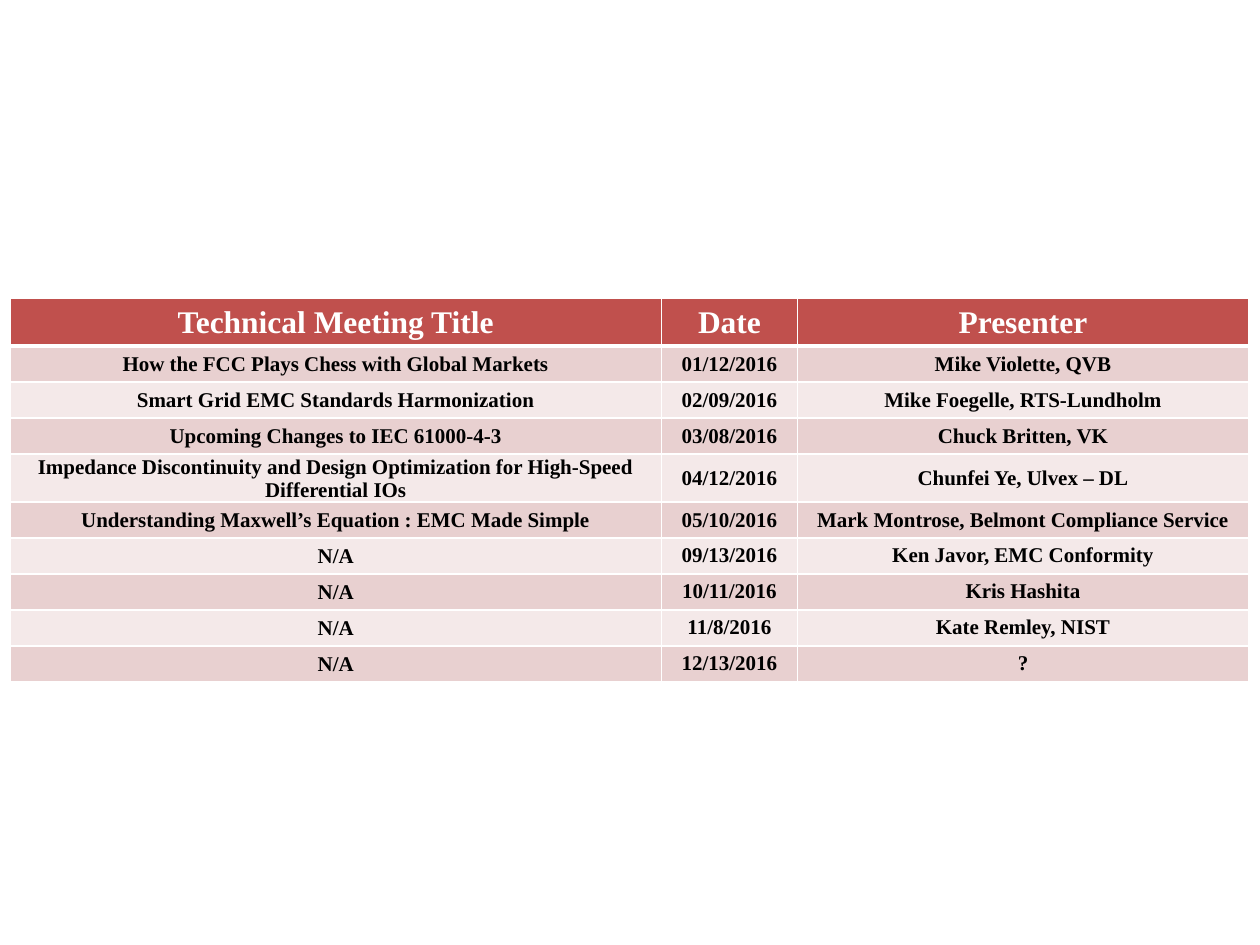
from lxml.etree import SubElement
from pptx import Presentation
from pptx.dml.color import RGBColor
from pptx.enum.text import MSO_ANCHOR, PP_ALIGN
from pptx.oxml.ns import qn
from pptx.util import Inches, Pt

WHITE = RGBColor(0xFF, 0xFF, 0xFF)
BLACK = RGBColor(0x00, 0x00, 0x00)
HEADER_RED = RGBColor(0xC0, 0x50, 0x4D)
BANDS = [RGBColor(0xE8, 0xD0, 0xD0), RGBColor(0xF4, 0xE9, 0xE9)]

HEADINGS = ("Technical Meeting Title", "Date", "Presenter")
MEETINGS = [
    ("How the FCC Plays Chess with Global Markets", "01/12/2016", "Mike Violette, QVB"),
    ("Smart Grid EMC Standards Harmonization", "02/09/2016", "Mike Foegelle, RTS-Lundholm"),
    ("Upcoming Changes to IEC 61000-4-3", "03/08/2016", "Chuck Britten, VK"),
    ("Impedance Discontinuity and Design Optimization for High-Speed Differential IOs",
     "04/12/2016", "Chunfei Ye, Ulvex – DL"),
    ("Understanding Maxwell’s Equation : EMC Made Simple", "05/10/2016",
     "Mark Montrose, Belmont Compliance Service"),
    ("N/A", "09/13/2016", "Ken Javor, EMC Conformity"),
    ("N/A", "10/11/2016", "Kris Hashita"),
    ("N/A", "11/8/2016", "Kate Remley, NIST"),
    ("N/A", "12/13/2016", "?"),
]
COLUMN_WIDTHS = [5.17, 1.08, 3.58]
ROW_HEIGHTS = [0.37] + [0.28] * 3 + [0.38] + [0.28] * 5


def write_cell(cell, text, size=12, color=BLACK, fill=BANDS[0]):
    cell.fill.solid()
    cell.fill.fore_color.rgb = fill
    cell.vertical_anchor = MSO_ANCHOR.MIDDLE
    paragraph = cell.text_frame.paragraphs[0]
    paragraph.alignment = PP_ALIGN.CENTER
    run = paragraph.add_run()
    run.text = text
    run.font.name = "Times New Roman"
    run.font.size = Pt(size)
    run.font.bold = True
    run.font.color.rgb = color


def add_borders(cell, bottom=1):
    properties = cell._tc.get_or_add_tcPr()
    widths = {"a:lnL": 1, "a:lnR": 1, "a:lnT": 1, "a:lnB": bottom}
    for index, (tag, width) in enumerate(widths.items()):
        line = SubElement(properties, qn(tag), w=str(Pt(width)))
        fill = SubElement(line, qn("a:solidFill"))
        SubElement(fill, qn("a:srgbClr"), val=str(WHITE))
        properties.insert(index, line)  # borders come before the cell fill


presentation = Presentation()
presentation.slide_width = Inches(10)
presentation.slide_height = Inches(7.5)
slide = presentation.slides.add_slide(presentation.slide_layouts[6])

# Meeting schedule table
table = slide.shapes.add_table(
    len(ROW_HEIGHTS), len(COLUMN_WIDTHS), Inches(0.08), Inches(2.37),
    Inches(sum(COLUMN_WIDTHS)), Inches(sum(ROW_HEIGHTS))).table
for column, width in zip(table.columns, COLUMN_WIDTHS):
    column.width = Inches(width)
for row, height in zip(table.rows, ROW_HEIGHTS):
    row.height = Inches(height)

# Header row
for cell, heading in zip(table.rows[0].cells, HEADINGS):
    write_cell(cell, heading, size=18, color=WHITE, fill=HEADER_RED)
    add_borders(cell, bottom=3)

# Meetings in alternating bands
for index, meeting in enumerate(MEETINGS):
    cells = list(table.rows[index + 1].cells)
    for cell, text in zip(cells, meeting):
        write_cell(cell, text, fill=BANDS[index % 2])
        add_borders(cell)
    title_cell = cells[0]
    title_cell.margin_left = title_cell.margin_right = title_cell.margin_top = Inches(0.01)
    title_cell.margin_bottom = 0

presentation.save("out.pptx")
